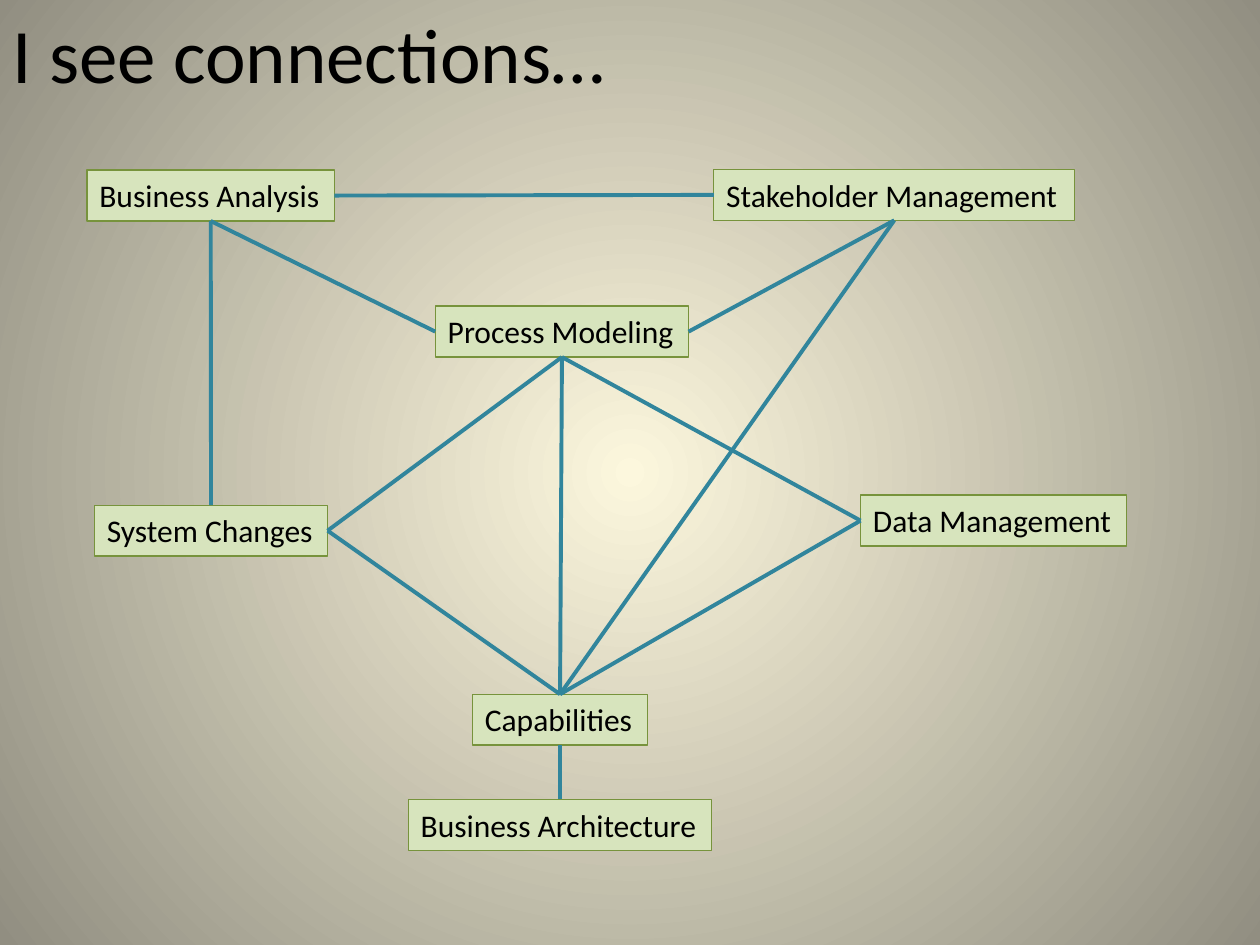
from dataclasses import dataclass

from lxml.etree import SubElement
from pptx import Presentation
from pptx.dml.color import RGBColor as Color
from pptx.enum.shapes import MSO_CONNECTOR as Connector
from pptx.enum.text import MSO_AUTO_SIZE as AutoSize
from pptx.oxml.ns import qn
from pptx.util import Inches, Pt

COLUMNS, ROWS = 100, 75
BOX_ROWS = 4.04
TOP, LEFT, BOTTOM, RIGHT = range(4)


@dataclass(frozen=True)
class Theme:
    font: str = "Calibri"
    title_size: int = 44
    label_size: int = 18
    text: str = "000000"
    glow_center: str = "FCF7DD"
    glow_edge: str = "918E81"
    box_fill: str = "D7E4BD"
    box_line: str = "77933C"
    link: str = "31859C"
    box_line_width: float = 0.75
    link_width: float = 2.25


THEME = Theme()

# Topic: left column, top row, width in columns
TOPICS = {
    "Business Analysis": (6.9, 13.5, 19.65),
    "Process Modeling": (34.55, 24.3, 20.1),
    "Data Management": (68.3, 39.3, 21.1),
    "Business Architecture": (32.4, 63.45, 24.1),
    "Capabilities": (37.5, 55.1, 13.9),
    "Stakeholder Management": (56.65, 13.45, 28.65),
    "System Changes": (7.5, 40.1, 18.5),
}

LINKS = [
    ("System Changes", TOP, "Business Analysis", BOTTOM),
    ("Process Modeling", BOTTOM, "System Changes", RIGHT),
    ("Capabilities", TOP, "Data Management", LEFT),
    ("Capabilities", TOP, "Process Modeling", BOTTOM),
    ("Capabilities", TOP, "System Changes", RIGHT),
    ("Capabilities", BOTTOM, "Business Architecture", TOP),
    ("Process Modeling", BOTTOM, "Data Management", LEFT),
    ("Process Modeling", RIGHT, "Stakeholder Management", BOTTOM),
    ("Capabilities", TOP, "Stakeholder Management", BOTTOM),
    ("Process Modeling", LEFT, "Business Analysis", BOTTOM),
    ("Business Analysis", RIGHT, "Stakeholder Management", LEFT),
]


def paint_background(slide):
    """Fill the slide with a circular gradient from its center."""
    fill = slide.background.fill
    fill.gradient()
    for stop, color in zip(fill.gradient_stops, (THEME.glow_center, THEME.glow_edge)):
        stop.color.rgb = Color.from_string(color)
    gradient = next(slide.element.iter(qn("a:gradFill")))
    linear = gradient.find(qn("a:lin"))
    if linear is not None:
        gradient.remove(linear)
    circle = SubElement(gradient, qn("a:path"), {"path": "circle"})
    SubElement(circle, qn("a:fillToRect"), dict.fromkeys("ltrb", "50000"))


def add_text(slide, text, left, top, width, height, size, wrap):
    """Add a text box placed in grid columns and rows."""
    column, row = Inches(10) / COLUMNS, Inches(7.5) / ROWS
    box = slide.shapes.add_textbox(
        round(left * column), round(top * row), round(width * column), round(height * row)
    )
    frame = box.text_frame
    frame.text = text
    frame.word_wrap = wrap
    frame.auto_size = AutoSize.SHAPE_TO_FIT_TEXT
    font = frame.paragraphs[0].runs[0].font
    font.name = THEME.font
    font.size = Pt(size)
    font.color.rgb = Color.from_string(THEME.text)
    return box


def add_topic(slide, text, left, top, width):
    box = add_text(slide, text, left, top, width, BOX_ROWS, THEME.label_size, False)
    box.fill.solid()
    box.fill.fore_color.rgb = Color.from_string(THEME.box_fill)
    box.line.color.rgb = Color.from_string(THEME.box_line)
    box.line.width = Pt(THEME.box_line_width)
    return box


def add_link(slide, start, start_side, end, end_side):
    link = slide.shapes.add_connector(Connector.STRAIGHT, 0, 0, 0, 0)
    link.begin_connect(start, start_side)
    link.end_connect(end, end_side)
    link.line.color.rgb = Color.from_string(THEME.link)
    link.line.width = Pt(THEME.link_width)
    SubElement(link.element.spPr, qn("a:effectLst"))


def main():
    presentation = Presentation()
    presentation.slide_width, presentation.slide_height = Inches(10), Inches(7.5)
    slide = presentation.slides.add_slide(presentation.slide_layouts[6])
    paint_background(slide)
    boxes = {text: add_topic(slide, text, *place) for text, place in TOPICS.items()}
    for start, start_side, end, end_side in LINKS:
        add_link(slide, boxes[start], start_side, boxes[end], end_side)
    add_text(slide, "I see connections…", 0, 0, COLUMNS, 8.4, THEME.title_size, True)
    presentation.save("out.pptx")


if __name__ == "__main__":
    main()
